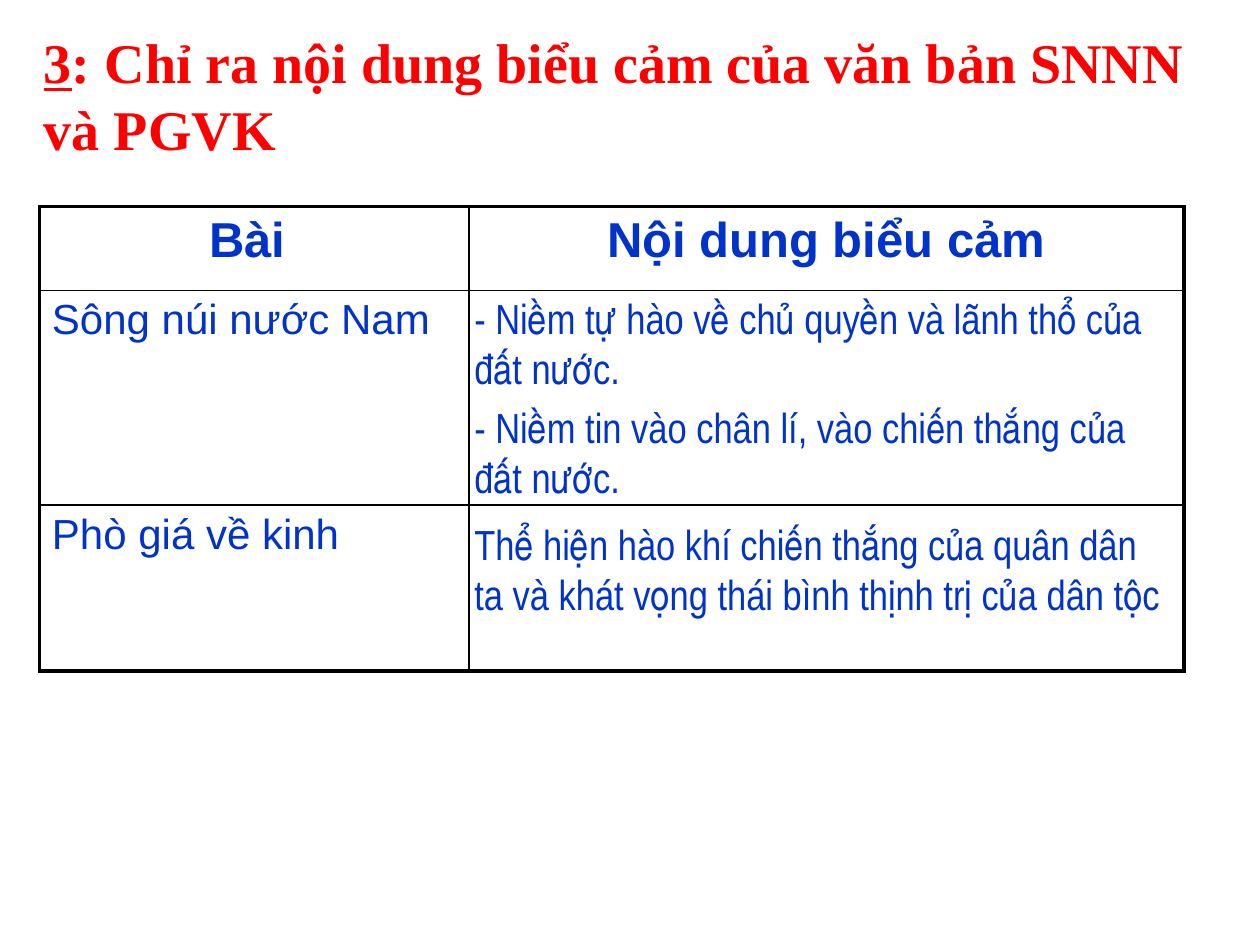
from pptx import Presentation
from pptx.dml.color import RGBColor
from pptx.enum.text import MSO_AUTO_SIZE, PP_ALIGN
from pptx.oxml.ns import qn
from pptx.util import Pt
from lxml.etree import SubElement

RED, BLUE, BLACK = "FF0000", "0033CC", "000000"


def color(hex_string):
    return RGBColor.from_string(hex_string)


class SlideBuilder:
    outer_line, inner_line = 2.25, 1
    body_size, header_size = 24, 28

    def __init__(self, slide):
        self.slide = slide

    def format_run(self, run, font, size, hex_string, bold=False, underline=False):
        run.font.name = font
        run.font.size = Pt(size)
        run.font.bold = bold
        run.font.underline = underline
        run.font.color.rgb = color(hex_string)

    def text_box(self, left, top, width, height, paragraphs, font, size,
                 hex_string, bold=False, underlined="", space=0):
        shape = self.slide.shapes.add_textbox(Pt(left), Pt(top), Pt(width), Pt(height))
        frame = shape.text_frame
        frame.word_wrap = True
        frame.auto_size = MSO_AUTO_SIZE.SHAPE_TO_FIT_TEXT
        frame.text = "\n".join(paragraphs)
        for paragraph in frame.paragraphs:
            paragraph.space_before = Pt(space)
            if underlined:
                rest = paragraph.text.removeprefix(underlined)
                paragraph.text = underlined
                paragraph.add_run().text = rest
            for run in paragraph.runs:
                self.format_run(run, font, size, hex_string, bold,
                                bool(underlined) and run.text == underlined)

    def border(self, cell, side, width):
        properties = cell._tc.get_or_add_tcPr()
        line = SubElement(properties, qn(f"a:ln{side}"), w=str(Pt(width)))
        fill = SubElement(line, qn("a:solidFill"))
        SubElement(fill, qn("a:srgbClr"), val=BLACK)

    def table(self, left, top, widths, heights, rows):
        frame = self.slide.shapes.add_table(
            len(heights), len(widths), Pt(left), Pt(top),
            Pt(sum(widths)), Pt(sum(heights)))
        table = frame.table
        table.first_row = table.horz_banding = False
        for column, width in zip(table.columns, widths):
            column.width = Pt(width)
        for row, height in zip(table.rows, heights):
            row.height = Pt(height)
        last_row, last_column = len(heights) - 1, len(widths) - 1
        for i, texts in enumerate(rows):
            for j, text in enumerate(texts):
                cell = table.cell(i, j)
                edges = {"L": j == 0, "R": j == last_column,
                         "T": i == 0, "B": i == last_row}
                for side, is_outer in edges.items():
                    self.border(cell, side, self.outer_line if is_outer else self.inner_line)
                cell.fill.background()
                cell.text_frame.text = text
                paragraph = cell.text_frame.paragraphs[0]
                header = i == 0
                size = self.header_size if header else self.body_size
                paragraph.alignment = PP_ALIGN.CENTER if header else PP_ALIGN.LEFT
                paragraph.space_before = Pt(size * 0.2)
                for run in paragraph.runs:
                    self.format_run(run, "Arial", size, BLUE, bold=header)


def main():
    presentation = Presentation()
    presentation.slide_width, presentation.slide_height = Pt(720), Pt(540)
    builder = SlideBuilder(presentation.slides.add_slide(presentation.slide_layouts[6]))

    # Table of poems, with room for the answers
    builder.table(22.5, 118, [245.5, 408.5], [48, 122.5, 95], [
        ["Bài ", "Nội dung biểu cảm"],
        ["Sông núi nước Nam", ""],
        ["Phò giá về kinh", ""],
    ])

    # Question
    builder.text_box(18, 12, 685.5, 85,
                     ["3: Chỉ ra nội dung biểu cảm của văn bản SNNN và PGVK"],
                     "Times New Roman", 32, RED, bold=True, underlined="3")

    # Answers over the right column
    answers = [
        (163.5, 129.5, ["- Niềm tự hào về chủ quyền và lãnh thổ của đất nước.",
                        "- Niềm tin vào chân lí, vào chiến thắng của đất nước."]),
        (292.5, 94.5, ["Thể hiện hào khí chiến thắng của quân dân ta "
                       "và khát vọng thái bình thịnh trị của dân tộc"]),
    ]
    for top, height, paragraphs in answers:
        builder.text_box(264, top, 408.5, height, paragraphs, "Arial Narrow",
                         builder.body_size, BLUE, space=4.8)

    presentation.save("out.pptx")


if __name__ == "__main__":
    main()
